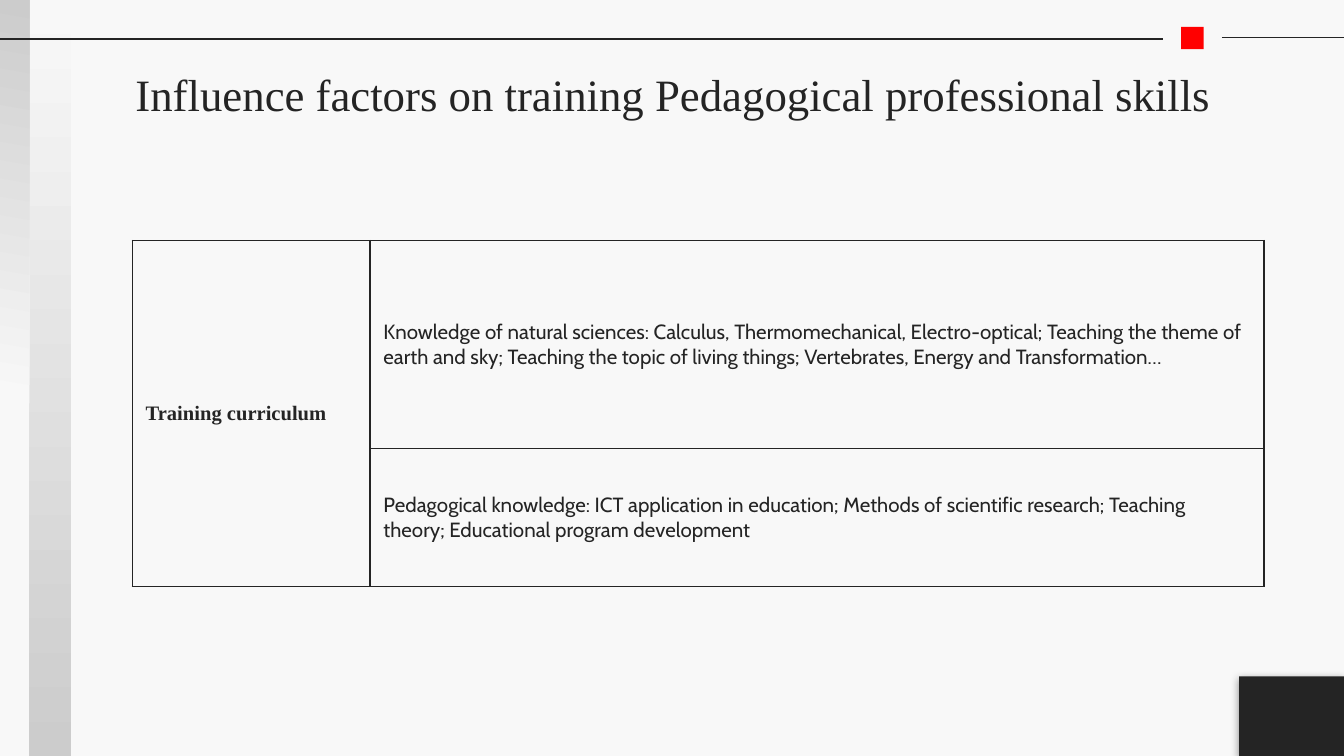
from lxml.etree import SubElement
from pptx import Presentation
from pptx.dml.color import RGBColor
from pptx.enum.shapes import MSO_CONNECTOR, MSO_SHAPE
from pptx.enum.text import MSO_ANCHOR, PP_ALIGN
from pptx.oxml import parse_xml
from pptx.oxml.ns import nsdecls, qn
from pptx.util import Pt

WIDTH, HEIGHT = 720, 405
INK, PAPER, GREY, RED = "242424", "F8F8F8", "CCCCCC", "FF0000"
SERIF, SANS = "Times New Roman", "Cabin"

TITLE = "Influence factors on training Pedagogical professional skills"
TOPIC = "Training curriculum"
DETAILS = [
    "Knowledge of natural sciences: Calculus, Thermomechanical, Electro-optical; "
    "Teaching the theme of earth and sky; Teaching the topic of living things; "
    "Vertebrates, Energy and Transformation…",
    "Pedagogical knowledge: ICT application in education; Methods of scientific "
    "research; Teaching theory; Educational program development",
]

# left, top, width, height, gradient angle, gradient stops
STRIPS = [
    (15.8, 0, 22.2, HEIGHT, 90, [(0, PAPER), (100, GREY)]),
    (0, 0, 15.8, HEIGHT, 280, [(0, PAPER), (47, PAPER), (100, GREY)]),
]
# left, right, height on the page
RULES = [(0, 623, 21), (654.6, WIDTH, 20.2)]
MARKER = (632.8, 14.4, 12, 12)
CORNER = (663.8, 362.4, WIDTH - 663.8, HEIGHT - 362.4)
TITLE_BOX = (57, 26.6, 607, 45.4)
TABLE_AT = (70.8, 128.8)
COLUMNS = [127.4, 479]
ROWS = [111.4, 74]


def color(value):
    return RGBColor.from_string(value)


def points(values):
    return [Pt(value) for value in values]


def add_box(page, place, fill=PAPER):
    box = page.shapes.add_shape(MSO_SHAPE.RECTANGLE, *points(place))
    box.shadow.inherit = False
    box.fill.solid()
    box.fill.fore_color.rgb = color(fill)
    box.line.fill.background()
    return box


def set_gradient(box, angle, stops):
    marks = "".join(
        f'<a:gs pos="{position * 1000}"><a:srgbClr val="{value}"/></a:gs>'
        for position, value in stops
    )
    gradient = parse_xml(
        f'<a:gradFill {nsdecls("a")} rotWithShape="1"><a:gsLst>{marks}</a:gsLst>'
        f'<a:lin ang="{angle * 60000}" scaled="0"/></a:gradFill>'
    )
    properties = box._element.spPr
    properties.replace(properties.find(qn("a:solidFill")), gradient)


def add_soft_shadow(box):
    effects = box._element.spPr.find(qn("a:effectLst"))
    effects.append(parse_xml(
        f'<a:outerShdw {nsdecls("a")} blurRad="{Pt(4.5)}" dist="{Pt(1.5)}" '
        f'dir="5400000" rotWithShape="0"><a:srgbClr val="{INK}">'
        '<a:alpha val="50000"/></a:srgbClr></a:outerShdw>'
    ))


def add_rule(page, left, right, top):
    rule = page.shapes.add_connector(
        MSO_CONNECTOR.STRAIGHT, *points((left, top, right, top)))
    rule.line.color.rgb = color(INK)
    rule.line.width = Pt(0.75)
    SubElement(rule._element.spPr, qn("a:effectLst"))


def write(frame, text, align=PP_ALIGN.LEFT, **font):
    para = frame.paragraphs[0]
    para.alignment = align
    span = para.add_run()
    span.text = text
    for name, value in font.items():
        setattr(span.font, name, value)
    span.font.color.rgb = color(INK)


def format_cell(cell):
    layout = {"vertical_anchor": MSO_ANCHOR.MIDDLE, "margin_left": Pt(7.2),
              "margin_right": Pt(7.2), "margin_top": 0, "margin_bottom": 0}
    for name, value in layout.items():
        setattr(cell, name, value)
    properties = cell._tc.get_or_add_tcPr()
    for side in ("lnL", "lnR", "lnT", "lnB"):
        properties.append(parse_xml(
            f'<a:{side} {nsdecls("a")} w="{Pt(0.75)}"><a:solidFill>'
            f'<a:srgbClr val="{INK}"/></a:solidFill></a:{side}>'
        ))
    cell.fill.background()


def add_factor_table(page):
    size = (sum(COLUMNS), sum(ROWS))
    table = page.shapes.add_table(
        len(ROWS), len(COLUMNS), *points(TABLE_AT + size)).table
    table.first_row = table.horz_banding = False
    for column, width in zip(table.columns, COLUMNS):
        column.width = Pt(width)
    for row, height in zip(table.rows, ROWS):
        row.height = Pt(height)
    for cell in table.iter_cells():
        format_cell(cell)
    topic = table.cell(0, 0)
    topic.merge(table.cell(len(ROWS) - 1, 0))
    write(topic.text_frame, TOPIC, name=SERIF, size=Pt(11), bold=True)
    for index, detail in enumerate(DETAILS):
        write(table.cell(index, 1).text_frame, detail,
              name=SANS, size=Pt(11), bold=False)


def add_title(page):
    frame = page.shapes.add_textbox(*points(TITLE_BOX)).text_frame
    layout = {"word_wrap": True, "vertical_anchor": MSO_ANCHOR.BOTTOM}
    layout.update({f"margin_{side}": Pt(7.2)
                   for side in ("left", "right", "top", "bottom")})
    for name, value in layout.items():
        setattr(frame, name, value)
    write(frame, TITLE, PP_ALIGN.CENTER, name=SERIF, size=Pt(24))


def main():
    deck = Presentation()
    deck.slide_width, deck.slide_height = points((WIDTH, HEIGHT))
    page = deck.slides.add_slide(deck.slide_layouts[6])
    page.background.fill.solid()
    page.background.fill.fore_color.rgb = color(PAPER)

    for *place, angle, stops in STRIPS:
        set_gradient(add_box(page, place), angle, stops)
    for rule in RULES:
        add_rule(page, *rule)
    add_box(page, MARKER, RED)
    add_soft_shadow(add_box(page, CORNER, INK))
    add_title(page)
    add_factor_table(page)
    deck.save("out.pptx")


if __name__ == "__main__":
    main()
